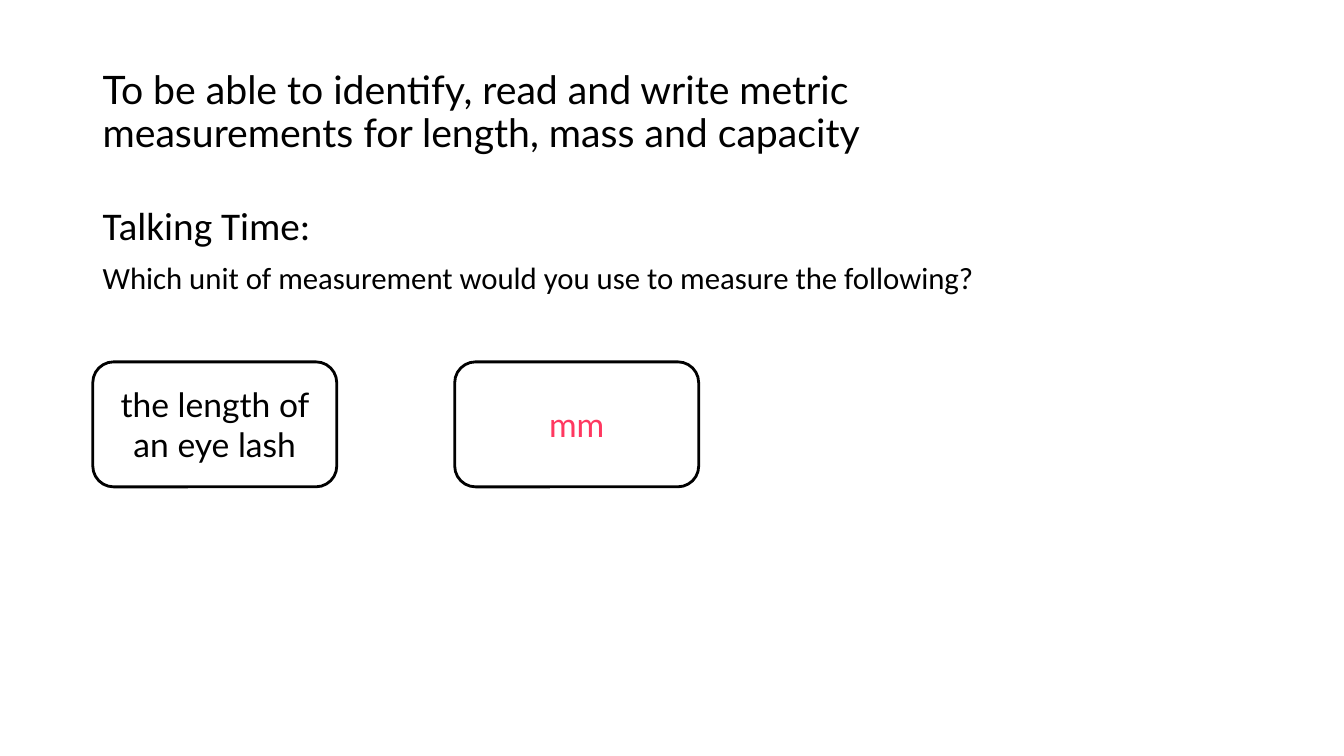
import pptx
import pptx.dml.color
import pptx.enum.shapes
import pptx.enum.text
import pptx.util

Inches = pptx.util.Inches
Pt = pptx.util.Pt
BLACK = pptx.dml.color.RGBColor(0x00, 0x00, 0x00)
WHITE = pptx.dml.color.RGBColor(0xFF, 0xFF, 0xFF)
ANSWER_PINK = pptx.dml.color.RGBColor(0xFF, 0x38, 0x60)

LEFT = 0.92
CARD_STEP = 3.59


def style_paragraph(paragraph, font_name, size, color):
    """Set the font of every run in a paragraph."""
    for run in paragraph.runs:
        run.font.name = font_name
        run.font.size = Pt(size)
        run.font.color.rgb = color


def add_text(slide, top, width, height, anchor, lines, font_name):
    """Add a wrapped text box with one paragraph per (text, size) line."""
    box = slide.shapes.add_textbox(
        Inches(LEFT), Inches(top), Inches(width), Inches(height)
    )
    text_frame = box.text_frame
    text_frame.word_wrap = True
    text_frame.vertical_anchor = anchor
    text_frame.text = "\n".join(text for text, size in lines)
    for index, (text, size) in enumerate(lines):
        paragraph = text_frame.paragraphs[index]
        paragraph.line_spacing = 0.9
        paragraph.space_before = Pt(10 if index else 0)
        style_paragraph(paragraph, font_name, size, BLACK)


def add_card(slide, column, text, color):
    """Add a rounded card with centred text in the given column."""
    card = slide.shapes.add_shape(
        pptx.enum.shapes.MSO_SHAPE.ROUNDED_RECTANGLE,
        Inches(LEFT + column * CARD_STEP),
        Inches(3.59),
        Inches(2.42),
        Inches(1.24),
    )
    card.shadow.inherit = False
    card.fill.solid()
    card.fill.fore_color.rgb = WHITE
    card.line.color.rgb = BLACK
    card.line.width = Pt(2)
    text_frame = card.text_frame
    text_frame.word_wrap = True
    text_frame.vertical_anchor = pptx.enum.text.MSO_ANCHOR.MIDDLE
    text_frame.text = text
    paragraph = text_frame.paragraphs[0]
    paragraph.alignment = pptx.enum.text.PP_ALIGN.CENTER
    style_paragraph(paragraph, "Lato", 24, color)


def main():
    """Build the metric measurement slide and save it."""
    presentation = pptx.Presentation()
    presentation.slide_width = Inches(13.33)
    presentation.slide_height = Inches(7.5)
    slide = presentation.slides.add_slide(presentation.slide_layouts[6])

    objective = (
        "To be able to identify, read and write metric "
        "measurements for length, mass and capacity"
    )
    add_text(
        slide, 0.4, 9.6, 1.45, pptx.enum.text.MSO_ANCHOR.MIDDLE,
        [(objective, 28)], "Lato",
    )
    question = "Which unit of measurement would you use to measure the following?"
    add_text(
        slide, 2, 11.5, 4.76, pptx.enum.text.MSO_ANCHOR.TOP,
        [("Talking Time:", 28), (question, 22)], "Calibri",
    )
    cards = [("the length of an eye lash", BLACK), ("mm", ANSWER_PINK)]
    for column, (text, color) in enumerate(cards):
        add_card(slide, column, text, color)

    presentation.save("out.pptx")


if __name__ == "__main__":
    main()
